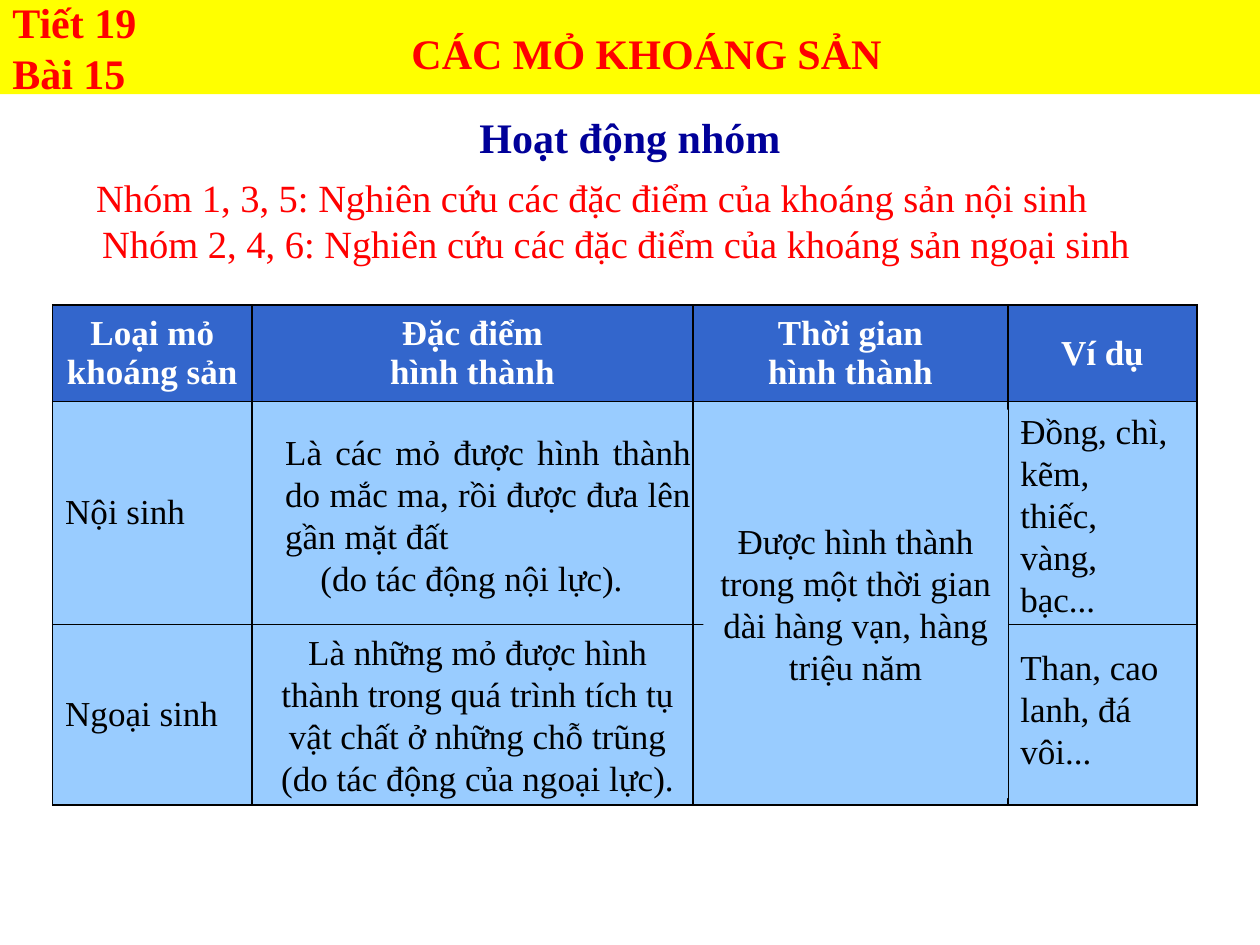
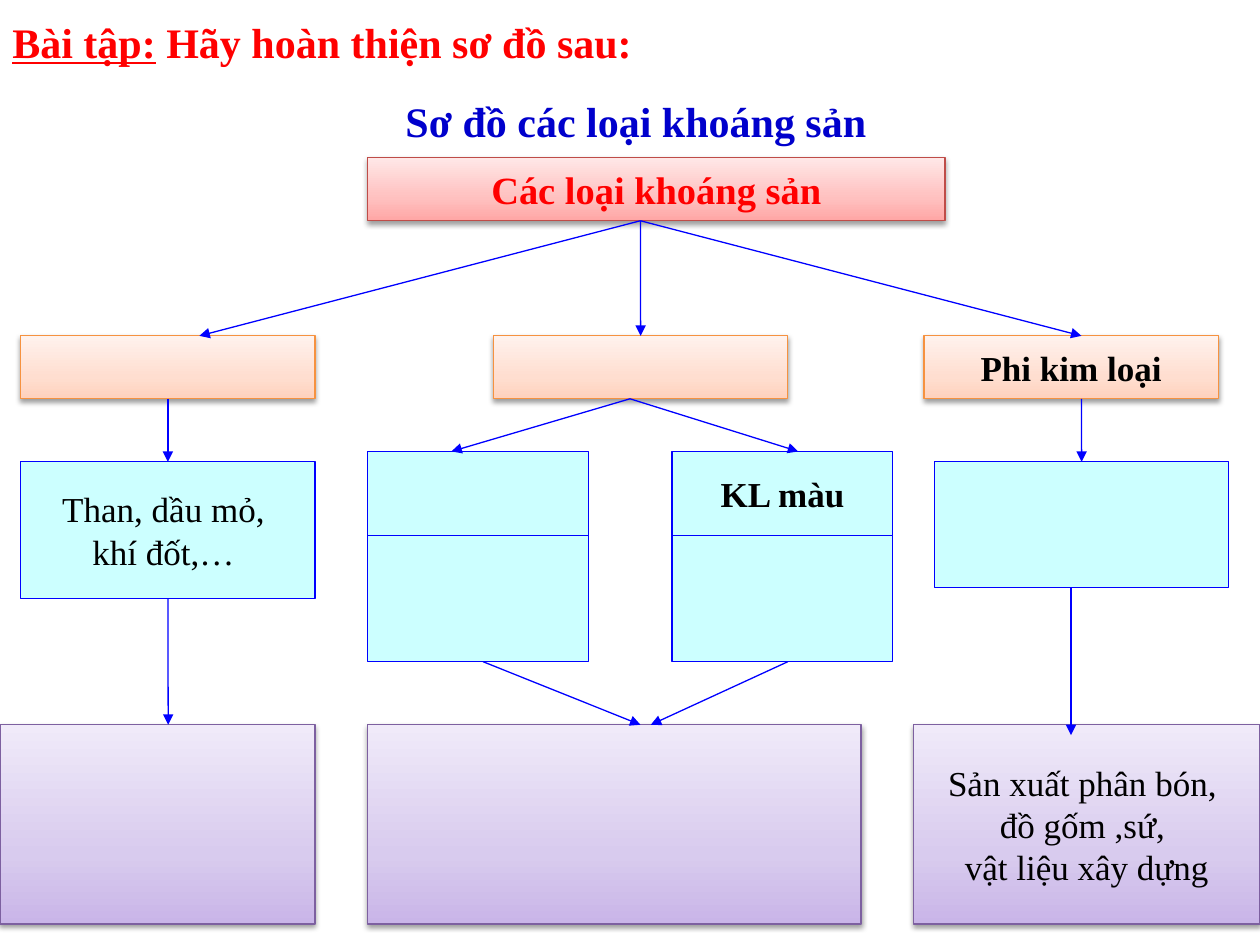
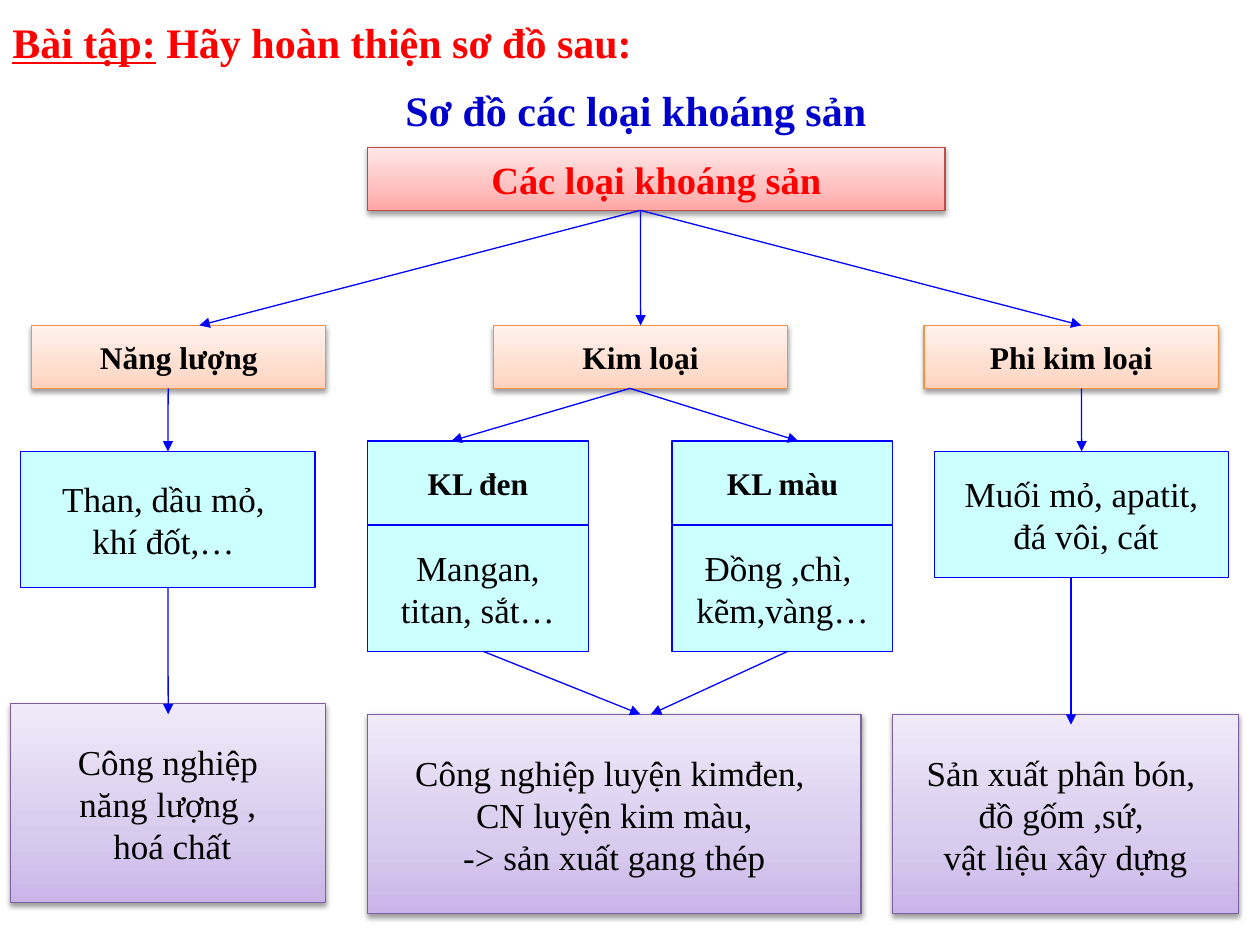
from copy import deepcopy
from dataclasses import dataclass, replace
from typing import NamedTuple

from pptx import Presentation
from pptx.dml.color import RGBColor
from pptx.enum import shapes, text
from pptx.oxml import parse_xml
from pptx.oxml.ns import nsdecls, qn
from pptx.util import Cm, Pt

FONT = "Times New Roman"
RED, BLACK, BLUE = "FF0000", "000000", "0000FF"
HEAD, SKY, AQUA = "3366CC", "99CCFF", "CCFFFF"
LEFT, MID, JUST = text.PP_ALIGN.LEFT, text.PP_ALIGN.CENTER, text.PP_ALIGN.JUSTIFY
TOP, HALF = text.MSO_ANCHOR.TOP, text.MSO_ANCHOR.MIDDLE


class Font(NamedTuple):
    size: float
    color: str = BLACK
    bold: bool = False


class Look(NamedTuple):
    fill: tuple[str, ...]  # one colour, or three from bottom to top
    line: str | None = None


class Place(NamedTuple):
    x: float
    y: float
    w: float
    h: float


@dataclass(frozen=True)
class Box:
    name: str
    place: Place
    look: Look
    font: Font


class Link(NamedTuple):
    x1: float
    y1: float
    x2: float
    y2: float


BODY = Font(20)
LABEL = Font(20, BLACK, True)
TITLE = Font(24, RED, True)
ROSE = Look(("FFA6A5", "FFC0BF", "FFE7E7"), "BF4C48")
PEACH = Look(("FFD2BD", "FFDED0", "FFF2ED"), "F69240")
LILAC = Look(("C9B5E8", "D8CBEE", "F0EAF9"), "7D60A0")
CYAN = Look((AQUA,), BLUE)


# Shared drawing functions
def rgb(code: str) -> RGBColor:
    return RGBColor.from_string(code)


def write(frame, words: str, font: Font, align=MID, anchor=HALF, wrap=True) -> None:
    frame.text = words
    frame.word_wrap = wrap
    frame.auto_size = text.MSO_AUTO_SIZE.NONE
    frame.vertical_anchor = anchor
    style(frame, font, align)


def style(frame, font: Font, align) -> None:
    for para in frame.paragraphs:
        para.alignment = align
        for run in para.runs:
            run.font.name, run.font.size = FONT, Pt(font.size)
            run.font.bold = font.bold
            run.font.color.rgb = rgb(font.color)


def note(slide, place: Place, words: str, font: Font, align=MID, anchor=HALF, wrap=True):
    box = slide.shapes.add_textbox(*map(Cm, place))
    write(box.text_frame, words, font, align, anchor, wrap)
    return box.text_frame


def head(slide, place: Place, words: str, font: Font, align=MID, anchor=HALF, wrap=True):
    title = slide.shapes.title
    title.left, title.top, title.width, title.height = map(Cm, place)
    write(title.text_frame, words, font, align, anchor, wrap)
    return title


def rect(slide, place: Place, look: Look):
    shape = slide.shapes.add_shape(shapes.MSO_SHAPE.RECTANGLE, *map(Cm, place))
    shape.shadow.inherit = False
    if len(look.fill) == 1:
        shape.fill.solid()
        shape.fill.fore_color.rgb = rgb(look.fill[0])
    else:
        shade(shape, look.fill)
    if look.line:
        shape.line.color.rgb = rgb(look.line)
        shape.line.width = Pt(0.75)
    else:
        shape.line.fill.background()
    return shape


def shade(shape, colors: tuple[str, ...]) -> None:
    """Give a shape a three-stop gradient and a soft shadow."""
    shape.fill.gradient()
    shape.fill.gradient_angle = 90
    props = shape._element.spPr
    first = props.find(qn("a:gradFill")).find(qn("a:gsLst"))[0]
    first.addnext(deepcopy(first))
    for stop, color, pos in zip(shape.fill.gradient_stops, colors, (0, 0.35, 1)):
        stop.color.rgb, stop.position = rgb(color), pos
    props.find(qn("a:effectLst")).append(parse_xml(
        f'<a:outerShdw {nsdecls("a")} blurRad="{Pt(3.1)}" dist="{Pt(1.6)}" '
        'dir="5400000" rotWithShape="0"><a:srgbClr val="000000">'
        '<a:alpha val="38000"/></a:srgbClr></a:outerShdw>'))


def side(boxes: dict, x: float, y: float):
    """Find the box whose top or bottom middle lies at a point."""
    for shape, p in boxes.values():
        for site, edge in ((0, p.y), (2, p.y + p.h)):
            if abs(p.x + p.w / 2 - x) < 0.03 and abs(edge - y) < 0.03:
                return shape, site
    return None


def arrow(slide, link: Link, boxes: dict) -> None:
    line = slide.shapes.add_connector(shapes.MSO_CONNECTOR.STRAIGHT, *map(Cm, link))
    start, end = side(boxes, *link[:2]), side(boxes, *link[2:])
    if start:
        line.begin_connect(*start)
    if end:
        line.end_connect(*end)
    line.line.color.rgb = rgb(BLUE)
    line.line.width = Pt(0.75)
    line.line._get_or_add_ln().append(
        parse_xml(f'<a:tailEnd {nsdecls("a")} type="triangle"/>'))
    line._element.spPr.append(parse_xml(f'<a:effectLst {nsdecls("a")}/>'))


# Slide 1: table of the mine types
ROWS = (
    ("Loại mỏ\nkhoáng sản", "Đặc điểm\nhình thành", "Thời gian\nhình thành", "Ví dụ"),
    ("Nội sinh", "", "", ""),
    ("Ngoại sinh", "", "", ""),
)
WIDTHS = (4.02, 8.89, 6.35, 3.81)
HEIGHTS = (1.94, 4.5, 3.64)


def cell(item, words: str, top: bool) -> None:
    props = item._tc.get_or_add_tcPr()
    for edge in ("lnL", "lnR", "lnT", "lnB"):
        props.append(parse_xml(
            f'<a:{edge} {nsdecls("a")} w="{Pt(1)}"><a:solidFill>'
            f'<a:srgbClr val="{BLACK}"/></a:solidFill></a:{edge}>'))
    item.fill.solid()
    item.fill.fore_color.rgb = rgb(HEAD if top else SKY)
    item.vertical_anchor = HALF
    item.text_frame.text = words
    font = Font(20, "FFFFFF", True) if top else BODY
    style(item.text_frame, font, MID if top else LEFT)


def grid(slide) -> None:
    place = Place(1.06, 6.15, sum(WIDTHS), sum(HEIGHTS))
    table = slide.shapes.add_table(len(ROWS), len(WIDTHS), *map(Cm, place)).table
    for col, width in zip(table.columns, WIDTHS):
        col.width = Cm(width)
    for r, (row, height) in enumerate(zip(ROWS, HEIGHTS)):
        table.rows[r].height = Cm(height)
        for c, words in enumerate(row):
            cell(table.cell(r, c), words, r == 0)


def mines(slide) -> None:
    tasks = note(slide, Place(1.69, 3.38, 21.45, 2.13),
                 "Nhóm 1, 3, 5: Nghiên cứu các đặc điểm của khoáng sản nội sinh\n"
                 "Nhóm 2, 4, 6: Nghiên cứu các đặc điểm của khoáng sản ngoại sinh",
                 Font(22, RED), wrap=False)
    tasks.paragraphs[0].alignment = LEFT
    note(slide, Place(9.1, 2.12, 7.2, 1.27), "Hoạt động nhóm",
         Font(24, "000099", True), anchor=TOP)
    grid(slide)

    # Shared time cell and the top band
    time = rect(slide, Place(14.18, 8.26, 6.14, 7.83), Look((SKY,)))
    write(time.text_frame, "Được hình thành trong một thời gian dài hàng vạn, "
          "hàng triệu năm", BODY)
    band = rect(slide, Place(0, 0, 25.4, 1.9), Look(("FFFF00",)))
    write(band.text_frame, "Tiết 19\nBài 15", TITLE, LEFT)
    title = head(slide, Place(8.04, 0.42, 10.37, 1.27), "CÁC MỎ KHOÁNG SẢN",
                 TITLE, LEFT, TOP)
    band._element.addnext(title._element)

    # Answers laid over the table
    inner = note(slide, Place(5.5, 8.26, 8.68, 4.23),
                 "Là các mỏ được hình thành do mắc ma, rồi được đưa lên gần mặt đất\n"
                 "(do tác động nội lực).", BODY, JUST)
    inner.paragraphs[1]._p.get_or_add_pPr().set("indent", str(Cm(0.71)))
    note(slide, Place(20.32, 8.26, 3.6, 4.23),
         "Đồng, chì, kẽm, thiếc, vàng, bạc...", BODY, LEFT)
    note(slide, Place(5.29, 12.7, 8.68, 3.39),
         "Là những mỏ được hình thành trong quá trình tích tụ vật chất ở những "
         "chỗ trũng\n(do tác động của ngoại lực).", BODY)
    note(slide, Place(20.32, 12.91, 3.6, 2.75), "Than, cao lanh, đá vôi...", BODY, LEFT)


# Slides 2 and 3: tree of the mineral types
BOXES = (
    Box("root", Place(7.41, 3.18, 11.64, 1.27), ROSE, Font(22, RED, True)),
    Box("fuel", Place(0.42, 6.77, 5.93, 1.27), PEACH, LABEL),
    Box("metal", Place(9.95, 6.77, 5.93, 1.27), PEACH, LABEL),
    Box("stone", Place(18.63, 6.77, 5.93, 1.27), PEACH, LABEL),
    Box("black", Place(7.41, 9.1, 4.45, 1.69), CYAN, LABEL),
    Box("color", Place(13.55, 9.1, 4.45, 1.69), CYAN, LABEL),
    Box("fuel kinds", Place(0.42, 9.31, 5.93, 2.75), CYAN, BODY),
    Box("stone kinds", Place(18.84, 9.31, 5.93, 2.54), CYAN, BODY),
    Box("black kinds", Place(7.41, 10.8, 4.45, 2.54), CYAN, BODY),
    Box("color kinds", Place(13.55, 10.8, 4.45, 2.54), CYAN, BODY),
    Box("fuel use", Place(0, 14.61, 6.35, 4.02), LILAC, BODY),
    Box("metal use", Place(7.41, 14.61, 9.95, 4.02), LILAC, BODY),
    Box("stone use", Place(18.42, 14.61, 6.98, 4.02), LILAC, BODY),
)
LINKS = (
    Link(12.91, 4.45, 4.02, 6.77),
    Link(12.91, 4.45, 12.91, 6.77),
    Link(12.91, 4.45, 21.8, 6.77),
    Link(3.39, 8.04, 3.39, 9.31),
    Link(3.39, 12.06, 3.39, 14.61),
    Link(12.7, 8.04, 9.1, 9.1),
    Link(12.7, 8.04, 16.09, 9.1),
    Link(21.8, 8.04, 21.8, 9.31),
    Link(9.74, 13.34, 12.91, 14.61),
    Link(15.88, 13.34, 13.12, 14.61),
    Link(21.59, 11.85, 21.59, 14.82),
)
GIVEN = {
    "root": "Các loại khoáng sản",
    "stone": "Phi kim loại",
    "color": "KL màu",
    "fuel kinds": "Than, dầu mỏ, \nkhí đốt,… ",
    "stone use": "Sản xuất phân bón, \nđồ gốm ,sứ, \nvật liệu xây dựng",
}
SOLVED = GIVEN | {
    "fuel": "Năng lượng",
    "metal": "Kim loại",
    "black": "KL đen",
    "stone kinds": "Muối mỏ, apatit,\n đá vôi, cát",
    "black kinds": "Mangan,\ntitan, sắt…",
    "color kinds": "Đồng ,chì, \nkẽm,vàng…",
    "fuel use": "Công nghiệp\nnăng lượng ,\n hoá chất",
    "metal use": "Công nghiệp luyện kimđen, \nCN luyện kim màu,\n-> sản xuất gang thép",
}
MOVED = {"fuel": (0.64, 6.77), "fuel use": (0.21, 14.39), "stone use": (17.99, 14.61)}


def solve(box: Box) -> Box:
    """Move a box and shrink its label for the solved tree."""
    x, y = MOVED.get(box.name, box.place[:2])
    font = Font(18, BLACK, True) if box.font == LABEL else box.font
    return replace(box, place=box.place._replace(x=x, y=y), font=font)


def tree(slide, boxes: tuple[Box, ...], words: dict[str, str], lift: float) -> None:
    head(slide, Place(6.15, 1.48 - lift, 13.34, 1.9), "Sơ đồ các loại khoáng sản",
         Font(24, "0000CC", True), wrap=False)
    drawn = {}
    for box in boxes:
        place = box.place._replace(y=box.place.y - lift)
        shape = rect(slide, place, box.look)
        drawn[box.name] = shape, place
        if box.name in words:
            write(shape.text_frame, words[box.name], box.font, wrap=False)
    for link in LINKS:
        arrow(slide, link._replace(y1=link.y1 - lift, y2=link.y2 - lift), drawn)

    # Task line with an underlined lead
    task = note(slide, Place(0, 0.21, 25.4, 1.27), "Bài tập:", TITLE, LEFT, TOP)
    para = task.paragraphs[0]
    para.add_run().text = " Hãy hoàn thiện sơ đồ sau:"
    style(task, TITLE, LEFT)
    para.runs[0].font.underline = True


def main() -> None:
    deck = Presentation()
    deck.slide_width, deck.slide_height = Cm(25.4), Cm(19.05)
    layout = deck.slide_layouts[5]
    mines(deck.slides.add_slide(layout))
    tree(deck.slides.add_slide(layout), BOXES, GIVEN, 0)
    tree(deck.slides.add_slide(layout), tuple(map(solve, BOXES)), SOLVED, 0.21)
    deck.save("out.pptx")


if __name__ == "__main__":
    main()
